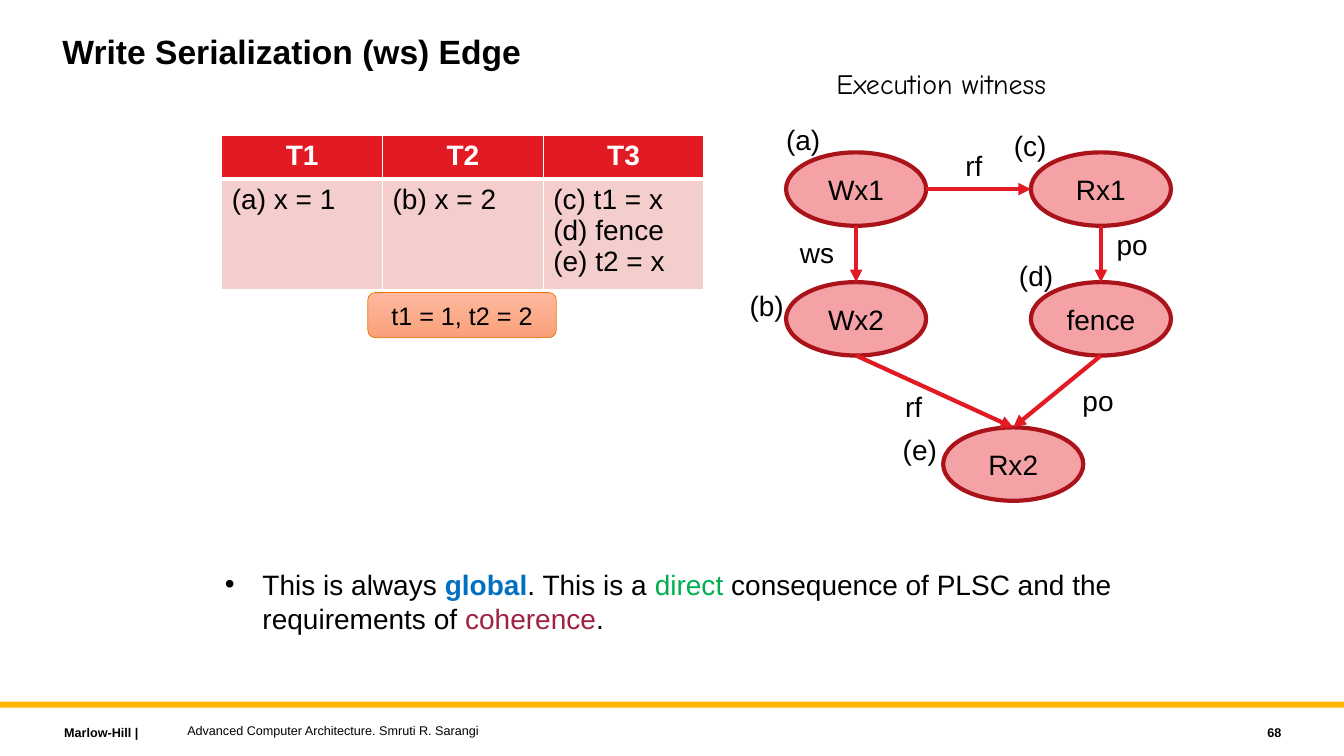
from pptx import Presentation
from pptx.dml.color import RGBColor
from pptx.enum.shapes import MSO_CONNECTOR, MSO_SHAPE
from pptx.enum.text import MSO_ANCHOR, MSO_AUTO_SIZE, PP_ALIGN
from pptx.oxml import parse_xml
from pptx.oxml.ns import nsdecls
from pptx.util import Cm, Pt

COLORS = {
    "black": "000000", "white": "FFFFFF", "gold": "FFB600", "red": "E21A23",
    "dark_red": "AA131A", "pink": "F4A2A6", "pale_pink": "F4CDCD",
    "orange": "EC7700", "peach": "FFB89D", "salmon": "F9A17C",
    "blue": "0070C0", "green": "00B050", "crimson": "9F2241",
}
NODE_WIDTH, NODE_HEIGHT = 3.53, 1.85
NODES = {
    "Wx1": (19.81, 3.84), "Wx2": (19.81, 7.11), "Rx1": (25.98, 3.84),
    "fence": (25.98, 7.11), "Rx2": (23.77, 10.77),
}
EDGES = [("Wx1", "Wx2"), ("Wx1", "Rx1"), ("Rx1", "fence"),
         ("fence", "Rx2"), ("Wx2", "Rx2")]
EDGE_LABELS = [("ws", 19.91, 5.82, 1.4), ("rf", 24.08, 3.61, 0.94),
               ("rf", 22.56, 9.68, 0.94), ("po", 27.89, 5.61, 1.3),
               ("po", 27.03, 9.55, 1.3)]
EVENT_LABELS = [("(a)", 19.56, 2.95), ("(b)", 18.64, 7.14), ("(c)", 25.3, 3.12),
                ("(d)", 25.43, 6.38), ("(e)", 22.5, 10.77)]
PROGRAM = [["T1", "T2", "T3"],
           ["(a) x = 1", "(b) x = 2", "(c) t1 = x\v(d) fence\n(e) t2 = x"]]
STATEMENT = [("This is always ", "black"), ("global", "blue"),
             (". This is a ", "black"), ("direct", "green"),
             (" consequence of PLSC and the requirements of ", "black"),
             ("coherence", "crimson"), (".", "black")]


def rgb(color):
    """Return the named colour."""
    return RGBColor.from_string(COLORS[color])


def format_run(run, size, color="black", bold=False, font="Arial"):
    """Set the font of one run."""
    run.font.name = font
    run.font.size = Pt(size)
    run.font.bold = bold
    run.font.color.rgb = rgb(color)


def write(frame, text, size, align=PP_ALIGN.LEFT, **font):
    """Fill a text frame and format its runs."""
    frame.text = text
    for paragraph in frame.paragraphs:
        paragraph.alignment = align
        for run in paragraph.runs:
            format_run(run, size, **font)


def add_label(slide, text, left, top, width, height=1.12, size=20, wrap=False,
              anchor=MSO_ANCHOR.TOP, **style):
    """Add a text box."""
    label = slide.shapes.add_textbox(Cm(left), Cm(top), Cm(width), Cm(height))
    label.text_frame.word_wrap = wrap
    label.text_frame.vertical_anchor = anchor
    write(label.text_frame, text, size, **style)


def add_filled(slide, kind, left, top, width, height):
    """Add a preset shape without shadow."""
    shape = slide.shapes.add_shape(kind, Cm(left), Cm(top), Cm(width), Cm(height))
    shape.shadow.inherit = False
    return shape


def add_node(slide, event):
    """Add one event ellipse of the execution witness."""
    node = add_filled(slide, MSO_SHAPE.OVAL, *NODES[event], NODE_WIDTH, NODE_HEIGHT)
    node.fill.solid()
    node.fill.fore_color.rgb = rgb("pink")
    node.line.color.rgb = rgb("dark_red")
    node.line.width = Pt(3)
    node.text_frame.vertical_anchor = MSO_ANCHOR.MIDDLE
    write(node.text_frame, event, 20, PP_ALIGN.CENTER)


def add_edge(slide, source, target):
    """Add an arrow to the right within a row, otherwise downwards."""
    (x1, y1), (x2, y2) = NODES[source], NODES[target]
    if y1 == y2:
        x1 += NODE_WIDTH
        y1 = y2 = y1 + NODE_HEIGHT / 2
    else:
        x1, x2 = x1 + NODE_WIDTH / 2, x2 + NODE_WIDTH / 2
        y1 += NODE_HEIGHT
    edge = slide.shapes.add_connector(
        MSO_CONNECTOR.STRAIGHT, Cm(x1), Cm(y1), Cm(x2), Cm(y2))
    edge.line.color.rgb = rgb("red")
    edge.line.width = Pt(3)
    edge.line._get_or_add_ln().append(
        parse_xml(f'<a:tailEnd {nsdecls("a")} type="triangle"/>'))
    edge._element.spPr.append(parse_xml(f'<a:effectLst {nsdecls("a")}/>'))


def set_borders(cell, bottom):
    """Give a cell white borders, with its own bottom width."""
    properties = cell._tc.get_or_add_tcPr()
    for position, (side, points) in enumerate(
            [("L", 1), ("R", 1), ("T", 1), ("B", bottom)]):
        properties.insert(position, parse_xml(
            f'<a:ln{side} {nsdecls("a")} w="{Pt(points)}"><a:solidFill>'
            f'<a:srgbClr val="{COLORS["white"]}"/></a:solidFill></a:ln{side}>'))


def add_program(slide):
    """Add the table of the three threads."""
    table = slide.shapes.add_table(
        2, 3, Cm(5.59), Cm(3.4), Cm(12.15), Cm(3.68)).table
    for column in table.columns:
        column.width = Cm(4.05)
    for row, height in zip(table.rows, (1.04, 2.64)):
        row.height = Cm(height)
    looks = [("red", 3, dict(align=PP_ALIGN.CENTER, color="white", bold=True)),
             ("pale_pink", 1, {})]
    for row, texts, (fill, bottom, style) in zip(table.rows, PROGRAM, looks):
        for cell, text in zip(row.cells, texts):
            cell.fill.solid()
            cell.fill.fore_color.rgb = rgb(fill)
            set_borders(cell, bottom)
            write(cell.text_frame, text, 20, **style)


def add_outcome(slide):
    """Add the rounded box with the final values."""
    outcome = add_filled(slide, MSO_SHAPE.ROUNDED_RECTANGLE, 9.27, 7.37, 4.75, 1.14)
    outcome.fill.gradient()
    outcome.fill.gradient_angle = 270
    for stop, color in zip(outcome.fill.gradient_stops, ("peach", "salmon")):
        stop.color.rgb = rgb(color)
    outcome.line.color.rgb = rgb("orange")
    outcome.line.width = Pt(0.5)
    outcome.text_frame.vertical_anchor = MSO_ANCHOR.MIDDLE
    write(outcome.text_frame, "t1 = 1, t2 = 2", 18, PP_ALIGN.CENTER)


def place(placeholder, left, top, width, height):
    """Move a placeholder and return its top-anchored text frame."""
    placeholder.left, placeholder.top = Cm(left), Cm(top)
    placeholder.width, placeholder.height = Cm(width), Cm(height)
    frame = placeholder.text_frame
    frame.word_wrap = True
    frame.auto_size = MSO_AUTO_SIZE.NONE
    frame.vertical_anchor = MSO_ANCHOR.TOP
    return frame


def fill_statement(body):
    """Write the bulleted statement with its coloured words."""
    paragraph = place(body, 5.41, 14.17, 23.01, 2.51).paragraphs[0]
    properties = paragraph._p.get_or_add_pPr()
    properties.set("marL", str(Cm(0.95)))
    properties.set("indent", str(-Cm(0.95)))
    properties.append(parse_xml(f'<a:buChar {nsdecls("a")} char="•"/>'))
    paragraph.space_before = Pt(0)
    for text, color in STATEMENT:
        run = paragraph.add_run()
        run.text = text
        format_run(run, 20, color, bold=color == "blue")


def add_footer(slide):
    """Add the gold rule and the footer texts."""
    rule = add_filled(slide, MSO_SHAPE.RECTANGLE, 0, 17.68, 33.87, 0.15)
    rule.fill.solid()
    rule.fill.fore_color.rgb = rgb("gold")
    rule.line.fill.background()
    footer = dict(height=0.64, size=9, wrap=True, anchor=MSO_ANCHOR.MIDDLE)
    add_label(slide, "Marlow-Hill\u00a0\u00a0 |".replace("\u00a0\u00a0 ", " "),
              1.37, 18.14, 5.77, bold=True, **footer)
    add_label(slide, "Advanced Computer Architecture. Smruti R. Sarangi",
              4.47, 18.08, 20.32, **footer)
    add_label(slide, "68", 28.98, 18.14, 3.56, bold=True,
              align=PP_ALIGN.RIGHT, **footer)


def main():
    """Build and save the slide."""
    presentation = Presentation()
    presentation.slide_width, presentation.slide_height = Cm(33.87), Cm(19.05)
    slide = presentation.slides.add_slide(presentation.slide_layouts[1])
    add_footer(slide)
    title = place(slide.shapes.title, 1.32, 0.76, 25.4, 2.29)
    write(title, "Write Serialization (ws) Edge", 24, bold=True)
    title.paragraphs[0].line_spacing = 0.9
    fill_statement(slide.placeholders[1])
    add_program(slide)
    add_outcome(slide)
    add_label(slide, "Execution witness", 20.83, 1.55, 6.48, font="Comic Neue")
    for event in NODES:
        add_node(slide, event)
    for source, target in EDGES:
        add_edge(slide, source, target)
    for text, left, top, width in EDGE_LABELS:
        add_label(slide, text, left, top, width)
    for text, left, top in EVENT_LABELS:
        add_label(slide, text, left, top, 2.54, wrap=True)
    presentation.save("out.pptx")


if __name__ == "__main__":
    main()
